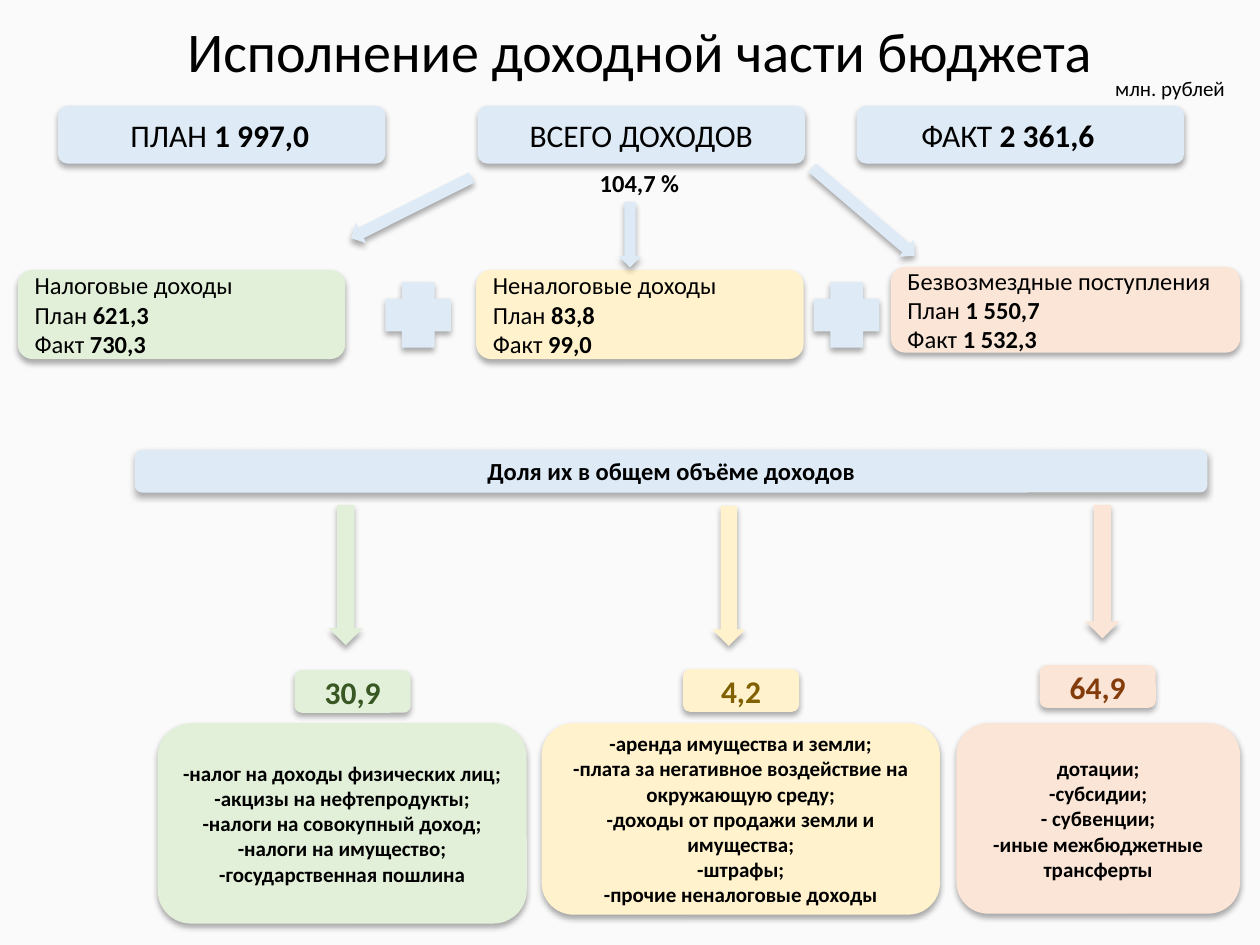
from lxml.etree import SubElement as Sub
from pptx import Presentation as Deck
from pptx.dml.color import RGBColor as Rgb
from pptx.enum.shapes import MSO_SHAPE as Form
from pptx.enum.text import MSO_ANCHOR as Anchor, PP_ALIGN as Align
from pptx.oxml.ns import qn
from pptx.util import Cm, Pt

HUES = {
    "page": "FAFAFA", "ink": "000000", "blue": "DEEBF7",
    "green": "E2F0D9", "gold": "FFF2CC", "peach": "FBE5D6",
    "leaf": "385723", "ochre": "806000", "rust": "843C0B",
}


class Board:
    """Holds the style and the slide being filled."""

    font = "Calibri"

    def __init__(self, deck):
        self.slide = deck.slides.add_slide(deck.slide_layouts[6])
        fill = self.slide.background.fill
        fill.solid()
        fill.fore_color.rgb = self.tint("page")

    def tint(self, hue):
        return Rgb.from_string(HUES[hue])

    def words(self, shape, paras, size, hue="ink", align=Align.CENTER, lead=None):
        frame = shape.text_frame
        frame.word_wrap = True
        frame.vertical_anchor = Anchor.MIDDLE
        for num, runs in enumerate(paras):
            para = frame.add_paragraph() if num else frame.paragraphs[0]
            para.alignment = align
            if lead:
                para.line_spacing = lead
            for text, bold in runs:
                run = para.add_run()
                run.text = text
                font = run.font
                font.name, font.size, font.bold = self.font, Pt(size), bold
                font.color.rgb = self.tint(hue)
        return frame

    def shade(self, shape):
        shape.shadow.inherit = False
        effects = shape._element.spPr.find(qn("a:effectLst"))
        drop = Sub(effects, qn("a:outerShdw"), blurRad=str(Pt(3.5)),
                   dist=str(Pt(2.2)), dir="5400000", algn="ctr", rotWithShape="0")
        black = Sub(drop, qn("a:srgbClr"), val=HUES["ink"])
        Sub(black, qn("a:alpha"), val="32000")

    def form(self, kind, spot, hue, turn=0):
        shape = self.slide.shapes.add_shape(kind, *map(Cm, spot))
        shape.fill.solid()
        shape.fill.fore_color.rgb = self.tint(hue)
        shape.line.fill.background()
        shape.rotation = turn
        self.shade(shape)
        return shape

    def card(self, spot, hue, paras, size, ink="ink", align=Align.CENTER, inset=0.25):
        shape = self.form(Form.ROUNDED_RECTANGLE, spot, hue)
        self.words(shape, paras, size, ink, align).margin_left = Cm(inset)

    def arrow(self, spot, hue, turn=90):
        self.form(Form.RIGHT_ARROW, spot, hue, turn)

    def plus(self, left):
        self.form(Form.CROSS, (left, 5.69, 1.32, 1.32), "blue")

    def label(self, spot, text, size, bold=False, align=Align.LEFT, lead=None):
        box = self.slide.shapes.add_textbox(*map(Cm, spot))
        self.words(box, [[(text, bold)]], size, "ink", align, lead)


def main():
    deck = Deck()
    deck.slide_width, deck.slide_height = Cm(25.4), Cm(19.05)
    board = Board(deck)

    board.label((1.96, 0, 21.89, 2.21), "Исполнение доходной части бюджета", 32,
                align=Align.CENTER, lead=0.9)

    heads = [
        (1.17, [("ПЛАН ", False), ("1 997,0", True)], Align.LEFT, 1.4),
        (9.63, [("ВСЕГО ДОХОДОВ", False)], Align.CENTER, 0.25),
        (17.27, [("ФАКТ ", False), ("2 361,6", True)], Align.LEFT, 1.25),
    ]
    for left, runs, align, inset in heads:
        board.card((left, 2.13, 6.6, 1.17), "blue", [runs], 18,
                   align=align, inset=inset)

    kinds = [
        ((0.36, 5.44, 6.6, 1.8), "green", "Налоговые доходы", "621,3", "730,3"),
        ((9.6, 5.44, 6.6, 1.8), "gold", "Неналоговые доходы", "83,8", "99,0"),
        ((17.96, 5.38, 7.04, 1.73), "peach", "Безвозмездные поступления",
         "1 550,7", "1 532,3"),
    ]
    for spot, hue, name, plan, fact in kinds:
        rows = [[(name, False)], [("План ", False), (plan, True)],
                [("Факт ", False), (fact, True)]]
        board.card(spot, hue, rows, 14, align=Align.LEFT)

    for spot, turn in [((6.93, 3.96, 2.72, 0.46), 153.4),
                       ((12.04, 4.5, 1.32, 0.46), 90),
                       ((16.05, 4.04, 2.72, 0.46), 40.6)]:
        board.arrow(spot, "blue", turn)

    board.card((2.72, 9.07, 21.62, 0.86), "blue",
               [[("Доля их в общем объёме доходов", True)]], 14)

    shares = [
        ("green", "leaf", "30,9", (5.56, 11.25, 2.82, 0.69), (5.94, 13.51),
         (3.18, 14.58, 7.44, 4.04),
         ["-налог на доходы физических лиц;", "-акцизы на нефтепродукты;",
          "-налоги на совокупный доход;", "-налоги на имущество;",
          "-государственная пошлина"]),
        ("gold", "ochre", "4,2", (13.28, 11.28, 2.82, 0.66), (13.77, 13.49),
         (10.92, 14.58, 8.03, 3.86),
         ["-аренда имущества и земли;",
          "-плата за негативное воздействие на окружающую среду;",
          "-доходы от продажи земли и имущества;", "-штрафы;",
          "-прочие неналоговые доходы"]),
        ("peach", "rust", "64,9", (20.88, 11.18, 2.69, 0.69), (20.96, 13.41),
         (19.28, 14.58, 5.72, 3.84),
         ["дотации;", "-субсидии;", "- субвенции;",
          "-иные межбюджетные трансферты"]),
    ]
    for hue, ink, share, shaft, badge, spot, items in shares:
        board.card(spot, hue, [[(item, True)] for item in items], 12)
        board.card((*badge, 2.34, 0.86), hue, [[(share, True)]], 18, ink)
        board.arrow(shaft, hue)

    for left in (7.77, 16.41):
        board.plus(left)

    board.label((22.23, 1.4, 2.77, 0.76), "млн. рублей", 12)
    board.label((11.84, 3.25, 2.87, 0.86), "104,7 %", 14, True)
    deck.save("out.pptx")


if __name__ == "__main__":
    main()
